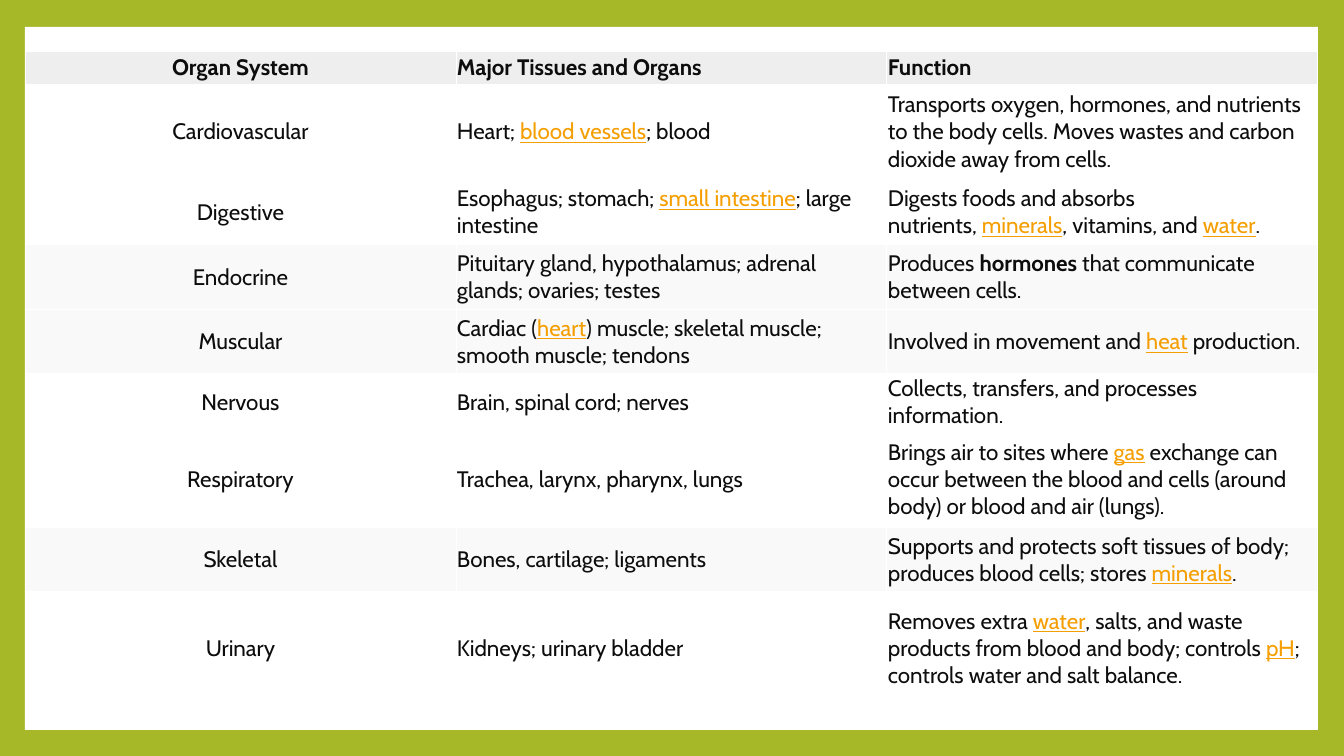
import dataclasses

import pptx
import pptx.dml.color
import pptx.enum.shapes
import pptx.enum.text
import pptx.oxml
import pptx.oxml.ns
import pptx.util


@dataclasses.dataclass(frozen=True)
class Theme:
    font: str = "Cabin"
    size: int = 16
    background: str = "A6B727"
    panel: str = "FFFFFF"
    border: str = "FFFFFF"
    header: str = "EEEEEE"
    shaded: str = "F9F9F9"
    text: str = "0D0D0D"
    link: str = "F59E00"


HEADER = ("Organ System", "Major Tissues and Organs", "Function")

# Text between bars is a link; with a leading star it is bold instead.
SYSTEMS = [
    ("Cardiovascular", "Heart; |blood vessels|; blood",
     "Transports oxygen, hormones, and nutrients to the body cells. "
     "Moves wastes and carbon dioxide away from cells."),
    ("Digestive", "Esophagus; stomach; |small intestine|; large intestine",
     "Digests foods and absorbs nutrients, |minerals|, vitamins, and |water|."),
    ("Endocrine", "Pituitary gland, hypothalamus; adrenal glands; ovaries; testes",
     "Produces |*hormones| that communicate between cells."),
    ("Muscular", "Cardiac (|heart|) muscle; skeletal muscle; smooth muscle; tendons",
     "Involved in movement and |heat| production."),
    ("Nervous", "Brain, spinal cord; nerves",
     "Collects, transfers, and processes information."),
    ("Respiratory", "Trachea, larynx, pharynx, lungs",
     "Brings air to sites where |gas| exchange can occur between the blood "
     "and cells (around body) or blood and air (lungs)."),
    ("Skeletal", "Bones, cartilage; ligaments",
     "Supports and protects soft tissues of body; produces blood cells; "
     "stores |minerals|."),
    ("Urinary", "Kidneys; urinary bladder",
     "Removes extra |water|, salts, and waste products from blood and body; "
     "controls |pH|; controls water and salt balance."),
]
SHADED_SYSTEMS = {"Endocrine", "Muscular", "Skeletal"}
ROW_HEIGHTS = [33, 96, 65, 65, 64, 57, 97, 64, 113]

SLIDE_WIDTH, SLIDE_HEIGHT = 1344, 756
NBSP = chr(160)


def px(n):
    return pptx.util.Emu(round(n * pptx.util.Inches(1) / 100.8))


def rgb(value):
    return pptx.dml.color.RGBColor.from_string(value)


def bind_edges(part):
    """Make a space at either end of a text part non-breaking."""
    if part.startswith(" "):
        part = NBSP + part[1:]
    if part.endswith(" "):
        part = part[:-1] + NBSP
    return part


class SlideBuilder:
    def __init__(self, prs, theme):
        self.theme = theme
        self.slide = prs.slides.add_slide(prs.slide_layouts[6])

    def background(self):
        fill = self.slide.background.fill
        fill.solid()
        fill.fore_color.rgb = rgb(self.theme.background)

    def panel(self, left, top, width, height):
        sp = self.slide.shapes.add_shape(
            pptx.enum.shapes.MSO_SHAPE.RECTANGLE,
            px(left), px(top), px(width), px(height))
        sp.shadow.inherit = False
        sp.fill.solid()
        sp.fill.fore_color.rgb = rgb(self.theme.panel)
        sp.line.fill.background()

    def table(self, left, top, width, row_heights, rows, shaded):
        frame = self.slide.shapes.add_table(
            len(rows), len(rows[0]), px(left), px(top), px(width), px(sum(row_heights)))
        table = frame.table
        table.first_row = table.horz_banding = False
        for column in table.columns:
            column.width = px(width // len(rows[0]))
        for i, (texts, height) in enumerate(zip(rows, row_heights)):
            table.rows[i].height = px(height)
            if i == 0:
                fill = self.theme.header
            else:
                fill = self.theme.shaded if texts[0] in shaded else self.theme.panel
            for j, text in enumerate(texts):
                self.cell(table.cell(i, j), text, fill, bold=i == 0, centred=j == 0)

    def cell(self, cell, text, fill, bold, centred):
        cell.margin_left = cell.margin_right = px(1)
        cell.margin_top = cell.margin_bottom = px(1)
        cell.vertical_anchor = pptx.enum.text.MSO_ANCHOR.MIDDLE
        self.borders(cell)
        cell.fill.solid()
        cell.fill.fore_color.rgb = rgb(fill)
        p = cell.text_frame.paragraphs[0]
        align = pptx.enum.text.PP_ALIGN
        p.alignment = align.CENTER if centred else align.LEFT
        p.font.name = self.theme.font
        p.font.size = pptx.util.Pt(self.theme.size)
        p.font.bold = bold
        p.font.color.rgb = rgb(self.theme.text)
        for k, part in enumerate(text.split("|")):
            r = p.add_run()
            r.text = bind_edges(part.lstrip("*"))
            if part.startswith("*"):
                r.font.bold = True
            elif k % 2:
                r.font.underline = True
                r.font.color.rgb = rgb(self.theme.link)

    def borders(self, cell):
        tc_pr = cell._tc.get_or_add_tcPr()
        for side in "LRTB":
            tc_pr.append(pptx.oxml.parse_xml(
                f'<a:ln{side} {pptx.oxml.ns.nsdecls("a")} w="{pptx.util.Pt(0.75)}">'
                f'<a:solidFill><a:srgbClr val="{self.theme.border}"/></a:solidFill>'
                f'</a:ln{side}>'))


def main():
    prs = pptx.Presentation()
    prs.slide_width, prs.slide_height = px(SLIDE_WIDTH), px(SLIDE_HEIGHT)
    builder = SlideBuilder(prs, Theme())
    builder.background()
    builder.panel(25, 27, 1293, 703)
    builder.table(25, 51, 1293, ROW_HEIGHTS, [HEADER, *SYSTEMS], SHADED_SYSTEMS)
    prs.save("out.pptx")


if __name__ == "__main__":
    main()
